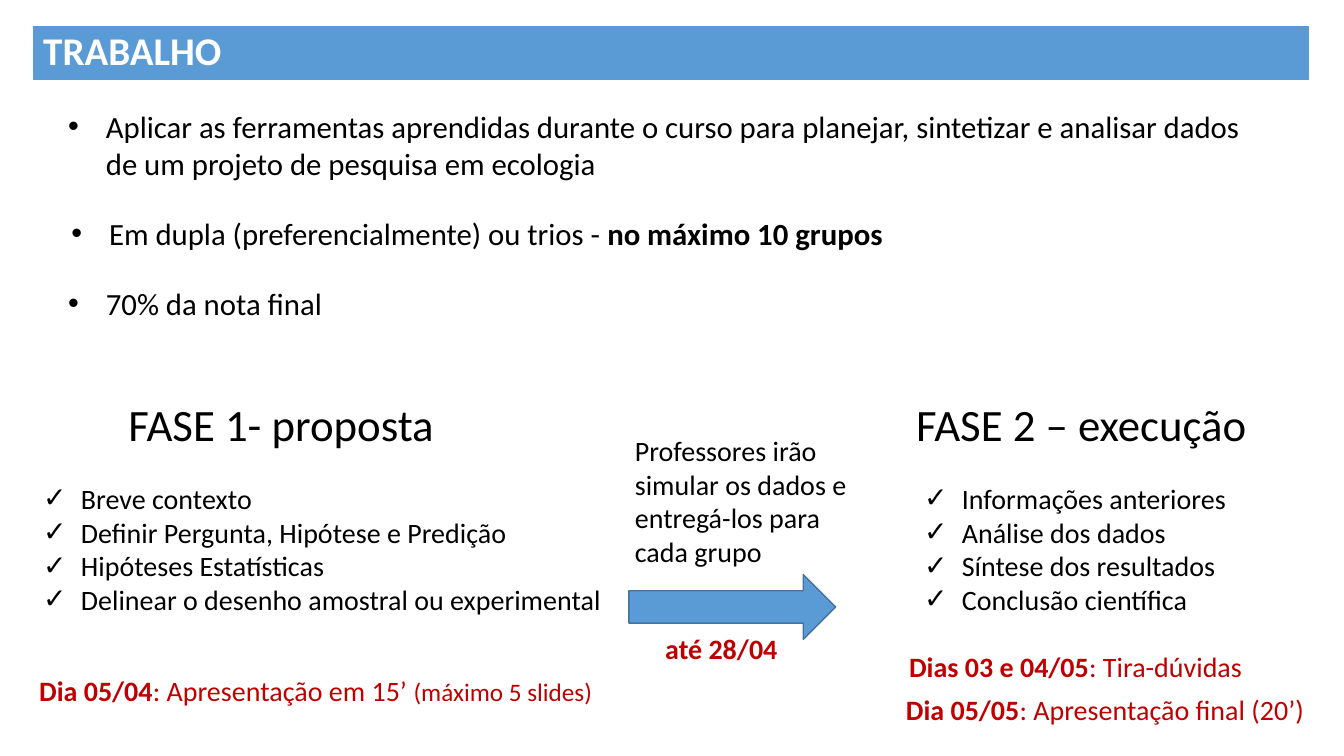
"""Build the TRABALHO slide: assignment rules, its two phases and their dates."""
from lxml import etree
from pptx import Presentation
from pptx import util as u
from pptx.dml.color import RGBColor
from pptx.enum import shapes, text
from pptx.oxml.ns import qn

COLORS = {"blue": "5B9BD5", "outline": "43739E", "black": "000000", "red": "C00000", "white": "FFFFFF"}
LEFT, CENTER = text.PP_ALIGN.LEFT, text.PP_ALIGN.CENTER

presentation = Presentation()
presentation.slide_width, presentation.slide_height = u.Cm(33.87), u.Cm(19.05)
slide = presentation.slides.add_slide(presentation.slide_layouts[6])


def add_block(kind, box, fill, line, line_width):
    """Add a filled preset shape without shadow."""
    shape = slide.shapes.add_shape(kind, *map(u.Cm, box))
    shape.shadow.inherit = False
    shape.fill.solid()
    shape.fill.fore_color.rgb = RGBColor.from_string(COLORS[fill])
    shape.line.color.rgb = RGBColor.from_string(COLORS[line])
    shape.line.width = u.Pt(line_width)
    return shape


def write(shape, paragraphs, size, color="black", align=LEFT, bullet=None):
    """Fill a shape with paragraphs, each a list of (text, bold, size or None) runs."""
    frame = shape.text_frame
    frame.word_wrap = True
    for index, runs in enumerate(paragraphs):
        paragraph = frame.paragraphs[0] if index == 0 else frame.add_paragraph()
        paragraph.alignment = align
        if bullet:
            properties = paragraph._p.get_or_add_pPr()
            properties.set("marL", str(u.Cm(0.95)))
            properties.set("indent", str(-u.Cm(0.95)))
            etree.SubElement(properties, qn("a:buFont")).set("typeface", "Arial")
            etree.SubElement(properties, qn("a:buChar")).set("char", bullet)
        for words, bold, run_size in runs:
            run = paragraph.add_run()
            run.text = words
            run.font.name = "Calibri"
            run.font.size = u.Pt(run_size or size)
            run.font.bold = bold
            run.font.color.rgb = RGBColor.from_string(COLORS[color])


title_bar = add_block(shapes.MSO_SHAPE.RECTANGLE, (0.84, 0.66, 32.13, 1.35), "blue", "blue", 0.75)
title_bar.text_frame.vertical_anchor = text.MSO_ANCHOR.MIDDLE
write(title_bar, [[("TRABALHO", True, None)]], 28, "white")
title_bar.text_frame.paragraphs[0].line_spacing = 0.9

rules = [
    (1.47, 2.59, 2.13, [("Aplicar as ferramentas aprendidas durante o curso para planejar, sintetizar e "
                         "analisar dados de um projeto de pesquisa em ecologia", False, None)]),
    (1.55, 5.28, 1.19, [("Em dupla (preferencialmente) ou trios - ", False, None),
                        ("no máximo 10 grupos", True, None)]),
    (1.47, 7.04, 1.19, [("70% da nota final", False, None)]),
]
for left, top, height, runs in rules:
    rule_box = slide.shapes.add_textbox(u.Cm(left), u.Cm(top), u.Cm(30.12), u.Cm(height))
    write(rule_box, [runs], 22, bullet="•")

phases = [
    ("FASE 1- proposta", 2.16, 9.86, 0.84, 14.94,
     ["Breve contexto", "Definir Pergunta, Hipótese e Predição", "Hipóteses Estatísticas",
      "Delinear o desenho amostral ou experimental"]),
    ("FASE 2 – execução", 21.82, 10.87, 23.04, 10.8,
     ["Informações anteriores", "Análise dos dados", "Síntese dos resultados", "Conclusão científica"]),
]
for heading, heading_left, heading_width, list_left, list_width, steps in phases:
    heading_box = slide.shapes.add_textbox(u.Cm(heading_left), u.Cm(9.88), u.Cm(heading_width), u.Cm(1.63))
    write(heading_box, [[(heading, False, None)]], 32, align=CENTER)
    steps_box = slide.shapes.add_textbox(u.Cm(list_left), u.Cm(12.01), u.Cm(list_width), u.Cm(3.68))
    write(steps_box, [[(step, False, None)] for step in steps], 20, bullet="✓")

handover_box = slide.shapes.add_textbox(u.Cm(15.75), u.Cm(10.8), u.Cm(6.32), u.Cm(3.68))
write(handover_box, [[("Professores irão simular os dados e entregá-los para cada grupo", False, None)]], 20)
add_block(shapes.MSO_SHAPE.RIGHT_ARROW, (15.85, 14.48, 5.21, 1.63), "blue", "outline", 1)

dates = [
    (0.08, 16.84, 15.75, CENTER, [("Dia 05/04", True, None), (": Apresentação em 15’ ", False, None),
                                  ("(máximo 5 slides)", False, 18)]),
    (15.93, 15.8, 4.5, CENTER, [("até 28/04", True, None)]),
    (22.66, 16.23, 10.9, LEFT, [("Dias 03 e 04/05", True, None), (": Tira-dúvidas", False, None)]),
    (22.58, 17.32, 10.97, LEFT, [("Dia 05/05", True, None), (": Apresentação final (20’)", False, None)]),
]
for left, top, width, align, runs in dates:
    date_box = slide.shapes.add_textbox(u.Cm(left), u.Cm(top), u.Cm(width), u.Cm(1.12))
    write(date_box, [runs], 20, "red", align)

presentation.save("out.pptx")
